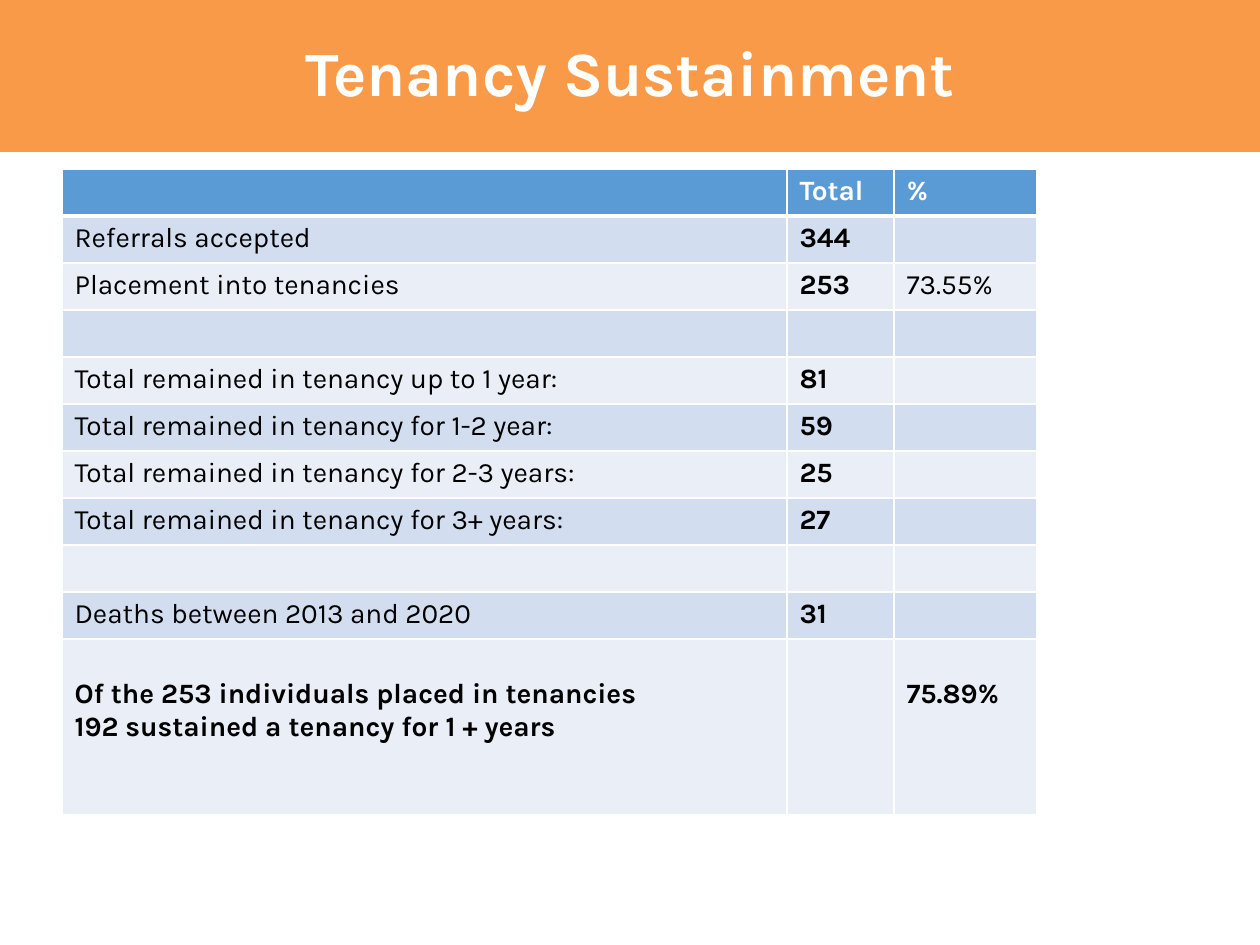
import pptx
import pptx.util
import pptx.dml.color
import pptx.enum.shapes
import pptx.enum.text
import pptx.oxml
import pptx.oxml.ns

PX = 914400 / 126
FONT = "Karla"
COLORS = {
    "banner": "F89A47",
    "header": "5B9BD5",
    "band_dark": "D2DEEF",
    "band_light": "EAEFF7",
    "white": "FFFFFF",
    "black": "000000",
}
COLUMNS = [725, 107, 143]
ROW_HEIGHT, LAST_ROW_HEIGHT = 47, 176
ROWS = [
    ("", "Total", "%"),
    ("Referrals accepted", "344", ""),
    ("Placement into tenancies", "253", "73.55%"),
    ("", "", ""),
    ("Total remained in tenancy up to 1 year:", "81", ""),
    ("Total remained in tenancy for 1-2 year:", "59", ""),
    ("Total remained in tenancy for 2-3 years:", "25", ""),
    ("Total remained in tenancy for 3+ years:", "27", ""),
    ("", "", ""),
    ("Deaths between 2013 and 2020", "31", ""),
    ("Of the 253 individuals placed in tenancies\n"
     "192 sustained a tenancy for 1 + years", "", "75.89%"),
]


def px(n):
    return pptx.util.Emu(round(n * PX))


def rgb(name):
    return pptx.dml.color.RGBColor.from_string(COLORS[name])


def set_font(p, size, color, bold):
    p.font.name = FONT
    p.font.size = pptx.util.Pt(size)
    p.font.bold = bold
    p.font.color.rgb = rgb(color)


def add_banner(s, text, width, height):
    sp = s.shapes.add_shape(pptx.enum.shapes.MSO_SHAPE.RECTANGLE,
                            0, 0, px(width), px(height))
    sp.shadow.inherit = False
    sp.fill.solid()
    sp.fill.fore_color.rgb = rgb("banner")
    sp.line.fill.background()
    tf = sp.text_frame
    tf.word_wrap = True
    tf.vertical_anchor = pptx.enum.text.MSO_ANCHOR.MIDDLE
    p = tf.paragraphs[0]
    p.text = text
    p.alignment = pptx.enum.text.PP_ALIGN.CENTER
    p.line_spacing = 0.9
    set_font(p, 36, "white", True)


def set_borders(cell, top, bottom):
    tc_pr = cell._tc.get_or_add_tcPr()
    for side, points in (("L", 1), ("R", 1), ("T", top), ("B", bottom)):
        tc_pr.append(pptx.oxml.parse_xml(
            f'<a:ln{side} {pptx.oxml.ns.nsdecls("a")} w="{pptx.util.Pt(points)}">'
            f'<a:solidFill><a:srgbClr val="{COLORS["white"]}"/></a:solidFill>'
            f'</a:ln{side}>'))


def fill_cell(cell, text, fill, color, bold):
    cell.fill.solid()
    cell.fill.fore_color.rgb = rgb(fill)
    if not text:
        cell.margin_top = cell.margin_bottom = 0
    cell.text_frame.text = text
    for p in cell.text_frame.paragraphs:
        set_font(p, 16, color, bold)


def add_table(s, left, top):
    last = len(ROWS) - 1
    heights = [ROW_HEIGHT] * last + [LAST_ROW_HEIGHT]
    table = s.shapes.add_table(len(ROWS), len(COLUMNS), px(left), px(top),
                               px(sum(COLUMNS)), px(sum(heights))).table
    for column, width in zip(table.columns, COLUMNS):
        column.width = px(width)
    for i, values in enumerate(ROWS):
        table.rows[i].height = px(heights[i])
        # Header first, then alternating bands
        band = "band_dark" if i % 2 else "band_light"
        fill, color = ("header", "white") if i == 0 else (band, "black")
        for j, text in enumerate(values):
            cell = table.cell(i, j)
            set_borders(cell, 3 if i == 1 else 1, 3 if i == 0 else 1)
            fill_cell(cell, text, fill, color, j == 1 or i in (0, last))
            # The summary row starts one line lower
            if i == last:
                cell.margin_top = px(39)


def main():
    prs = pptx.Presentation()
    prs.slide_width, prs.slide_height = px(1260), px(945)
    s = prs.slides.add_slide(prs.slide_layouts[6])
    add_banner(s, "Tenancy Sustainment", 1260, 152)
    add_table(s, 62, 169)
    prs.save("out.pptx")


if __name__ == "__main__":
    main()
